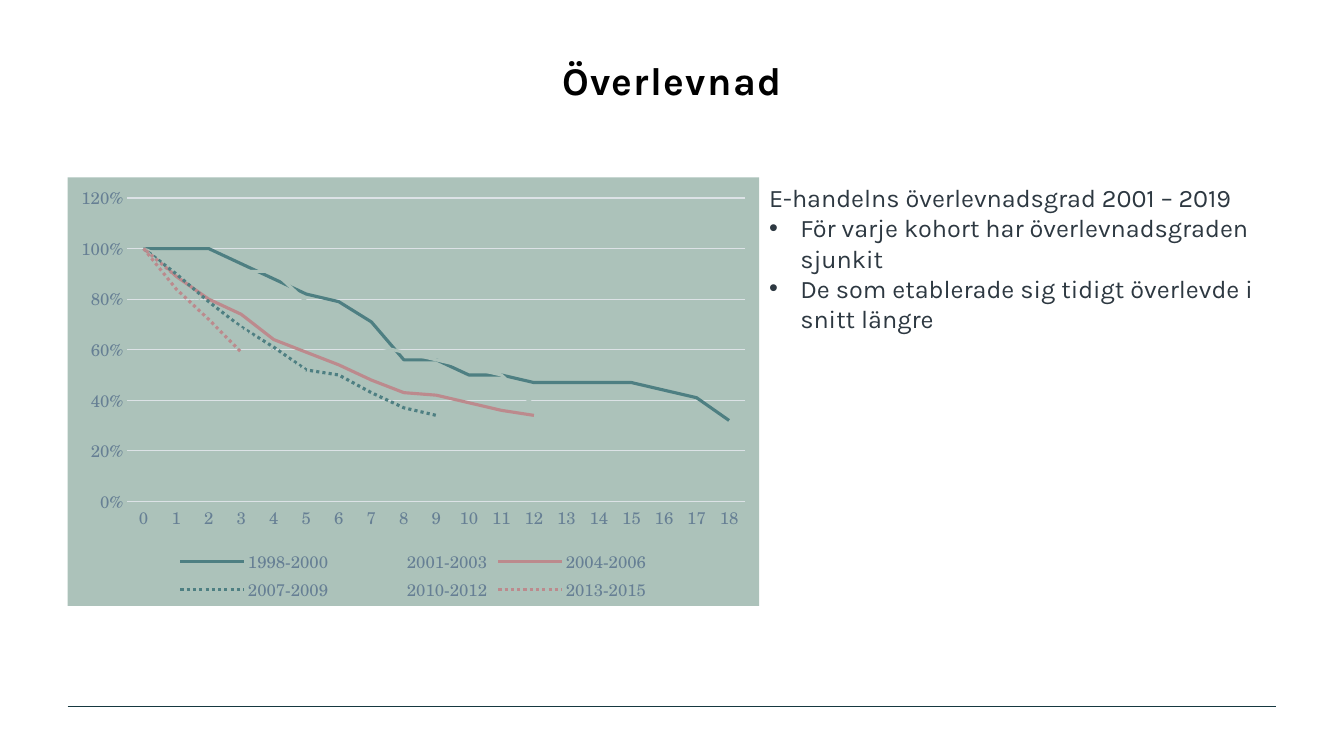
from lxml.etree import SubElement
from pptx import Presentation
from pptx.chart.data import CategoryChartData
from pptx.dml.color import RGBColor
from pptx.enum.chart import XL_CHART_TYPE as ChartType, XL_LEGEND_POSITION as LegendPosition
from pptx.enum.chart import XL_TICK_MARK as TickMark
from pptx.enum.dml import MSO_LINE as LineStyle
from pptx.enum.shapes import MSO_CONNECTOR as Connector
from pptx.enum.text import MSO_ANCHOR as Anchor, PP_ALIGN as Align
from pptx.oxml.ns import qn
from pptx.util import Inches, Pt

BLACK = RGBColor(0x00, 0x00, 0x00)
INK = RGBColor(0x2D, 0x38, 0x41)
RULE = RGBColor(0x16, 0x38, 0x40)
AXIS_TEXT = RGBColor(0x66, 0x7F, 0x94)
GRID = RGBColor(0xDC, 0xE2, 0xE6)
TEAL = RGBColor(0x4E, 0x7F, 0x82)
SAGE = RGBColor(0xAC, 0xC2, 0xBA)
ROSE = RGBColor(0xBC, 0x8A, 0x8D)

TEXT_FONT = "Karla"
CHART_FONT = "TeX Gyre Schola"

WIDTH, HEIGHT = Inches(13.33), Inches(7.5)
MARGIN = Inches(0.67)
CONTENT_WIDTH = WIDTH - 2 * MARGIN
CONTENT_TOP = Inches(1.76)
CHART_WIDTH = Inches(6.86)

YEARS = 19
COHORTS = [
    ("1998-2000", TEAL, LineStyle.SOLID,
     [1, 1, 1, 0.94, 0.88, 0.82, 0.79, 0.71, 0.56, 0.56, 0.5, 0.5,
      0.47, 0.47, 0.47, 0.47, 0.44, 0.41, 0.32]),
    ("2001-2003", SAGE, LineStyle.SOLID,
     [1, 0.94, 0.94, 0.91, 0.91, 0.79, 0.68, 0.62, 0.59, 0.56, 0.53, 0.5,
      0.38, 0.35, 0.32, 0.24]),
    ("2004-2006", ROSE, LineStyle.SOLID,
     [1, 0.89, 0.8, 0.74, 0.64, 0.59, 0.54, 0.48, 0.43, 0.42, 0.39, 0.36, 0.34]),
    ("2007-2009", TEAL, LineStyle.ROUND_DOT,
     [1, 0.9, 0.79, 0.69, 0.61, 0.52, 0.5, 0.43, 0.37, 0.34]),
    ("2010-2012", SAGE, LineStyle.ROUND_DOT,
     [1, 0.87, 0.76, 0.68, 0.59, 0.51, 0.42]),
    ("2013-2015", ROSE, LineStyle.ROUND_DOT, [1, 0.84, 0.72, 0.59]),
]
HEADING = "E-handelns överlevnadsgrad 2001 – 2019"
FINDINGS = [
    "För varje kohort har överlevnadsgraden sjunkit",
    "De som etablerade sig tidigt överlevde i snitt längre",
]


def set_font(font, name, size, color, bold=False):
    """Give a font its face, size, colour and weight."""
    font.name, font.size, font.bold = name, Pt(size), bold
    font.color.rgb = color


def set_line(line, color, width):
    """Give a line its colour and width in points."""
    line.color.rgb = color
    line.width = Pt(width)


def set_title(slide, text):
    """Place and format the title placeholder."""
    title = slide.shapes.title
    title.left, title.top = MARGIN, Inches(0.51)
    title.width, title.height = CONTENT_WIDTH, Inches(1.25)
    frame = title.text_frame
    frame.text = text
    frame.vertical_anchor = Anchor.TOP
    paragraph = frame.paragraphs[0]
    paragraph.alignment = Align.CENTER
    run = paragraph.runs[0]
    set_font(run.font, TEXT_FONT, 28, BLACK, bold=True)
    run.font._element.set("spc", "100")


def add_footer_rule(slide):
    """Draw the thin rule across the foot of the slide."""
    top = Inches(7.01)
    rule = slide.shapes.add_connector(
        Connector.STRAIGHT, MARGIN, top, MARGIN + CONTENT_WIDTH, top)
    set_line(rule.line, RULE, 1)
    SubElement(rule._element.spPr, qn("a:effectLst"))


def add_bullet(paragraph):
    """Turn a paragraph into a bullet with a hanging indent."""
    properties = paragraph._element.get_or_add_pPr()
    indent = Inches(0.31)
    properties.set("marL", str(indent))
    properties.set("indent", str(-indent))
    SubElement(properties, qn("a:buFont"), typeface="Arial")
    SubElement(properties, qn("a:buChar"), char="•")


def add_findings(slide, heading, findings):
    """Add the heading and its bullets to the right of the chart."""
    box = slide.shapes.add_textbox(
        MARGIN + CHART_WIDTH, CONTENT_TOP, CONTENT_WIDTH - CHART_WIDTH, Inches(1.62))
    frame = box.text_frame
    frame.word_wrap = True
    frame.text = "\n".join([heading, *findings])
    for paragraph in frame.paragraphs[1:]:
        add_bullet(paragraph)
    for paragraph in frame.paragraphs:
        set_font(paragraph.runs[0].font, TEXT_FONT, 18, INK)


def format_axes(chart):
    """Format both axes and the horizontal gridlines."""
    for axis in (chart.category_axis, chart.value_axis):
        axis.major_tick_mark = axis.minor_tick_mark = TickMark.NONE
        set_font(axis.tick_labels.font, CHART_FONT, 12, AXIS_TEXT)
    set_line(chart.category_axis.format.line, GRID, 0.75)
    values = chart.value_axis
    values.minimum_scale, values.maximum_scale, values.major_unit = 0, 1.2, 0.2
    values.tick_labels.number_format = "0%"
    values.tick_labels.number_format_is_linked = False
    values.format.line.fill.background()
    values.has_major_gridlines = True
    set_line(values.major_gridlines.format.line, GRID, 0.75)


def fill_chart_area(chart, color):
    """Fill the chart area with one colour and no outline."""
    space = chart._chartSpace
    area = space.makeelement(qn("c:spPr"))
    fill = SubElement(area, qn("a:solidFill"))
    SubElement(fill, qn("a:srgbClr"), val=str(color))
    SubElement(SubElement(area, qn("a:ln")), qn("a:noFill"))
    space.find(qn("c:chart")).addnext(area)


def add_survival_chart(slide):
    """Add the line chart of survival by cohort."""
    data = CategoryChartData(number_format="0%")
    data.categories = [str(year) for year in range(YEARS)]
    for name, _, _, shares in COHORTS:
        data.add_series(name, shares + [None] * (YEARS - len(shares)))
    chart = slide.shapes.add_chart(
        ChartType.LINE, MARGIN, CONTENT_TOP, CHART_WIDTH, Inches(4.25), data).chart
    set_font(chart.font, CHART_FONT, 10, INK)
    chart.has_title = False
    chart.plots[0].vary_by_categories = False
    for series, (_, color, dash, _) in zip(chart.plots[0].series, COHORTS):
        series.smooth = False
        set_line(series.format.line, color, 2.25)
        series.format.line.dash_style = dash
    chart.has_legend = True
    chart.legend.position = LegendPosition.BOTTOM
    chart.legend.include_in_layout = False
    set_font(chart.legend.font, CHART_FONT, 12, AXIS_TEXT)
    format_axes(chart)
    fill_chart_area(chart, SAGE)


def main():
    """Build the slide and save it."""
    presentation = Presentation()
    presentation.slide_width, presentation.slide_height = WIDTH, HEIGHT
    slide = presentation.slides.add_slide(presentation.slide_layouts[5])
    add_footer_rule(slide)
    set_title(slide, "Överlevnad")
    add_survival_chart(slide)
    add_findings(slide, HEADING, FINDINGS)
    presentation.save("out.pptx")


if __name__ == "__main__":
    main()
